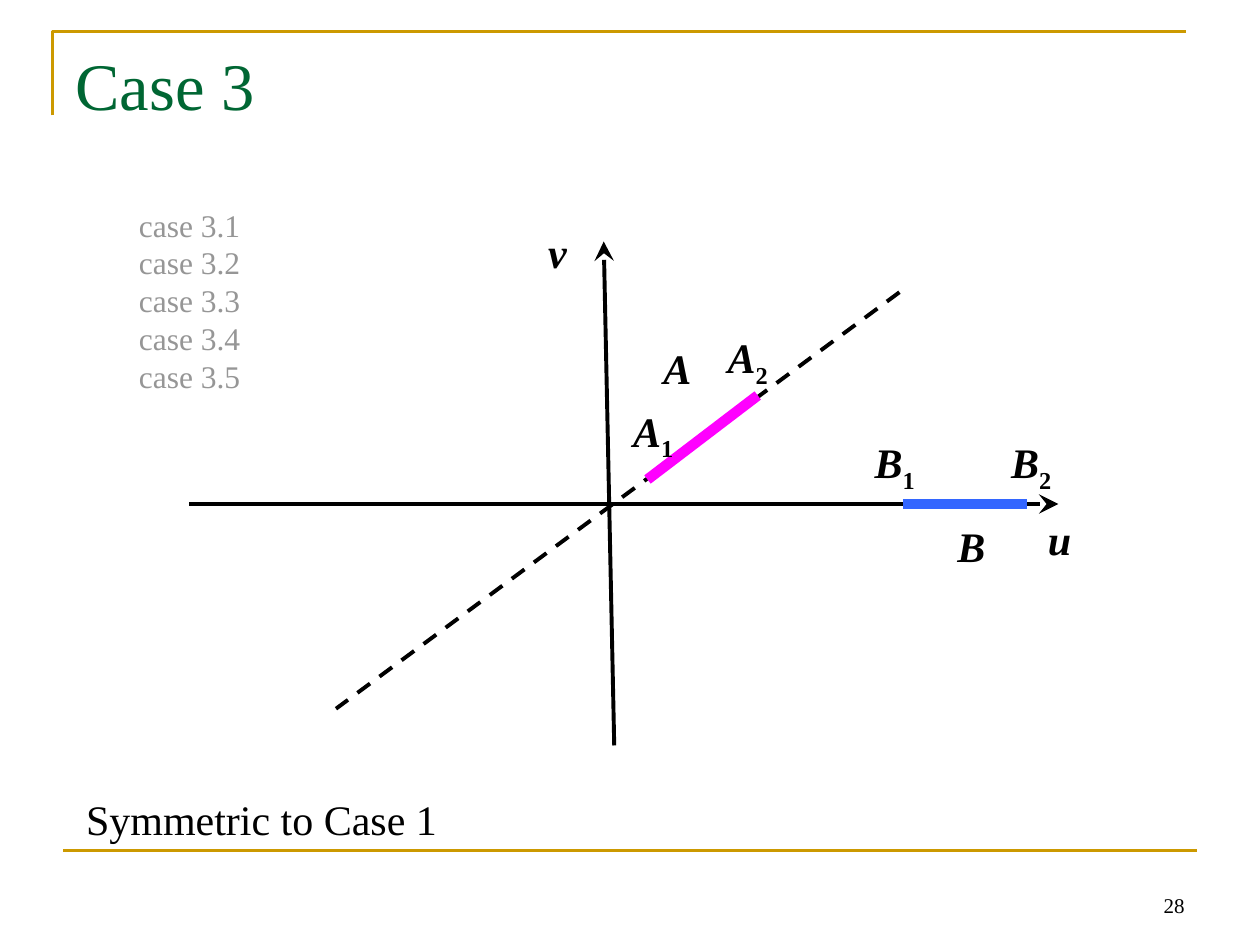
from dataclasses import dataclass

from lxml import etree
from pptx import Presentation
from pptx import util as u
from pptx.dml.color import RGBColor
from pptx.enum import dml, shapes, text
from pptx.oxml.ns import qn


@dataclass(frozen=True)
class Theme:
    font: str = "Times New Roman"
    ink: str = "000000"
    title: str = "006633"
    muted: str = "969696"
    frame: str = "CC9900"
    segment_a: str = "FF00FF"
    segment_b: str = "3366FF"
    title_size: float = 38
    body_size: float = 24
    list_size: float = 18
    number_size: float = 12
    frame_line: float = 1.5
    axis_line: float = 2.25
    segment_line: float = 6


THEME = Theme()
LABEL_HEIGHT = 36

TITLE = "Case 3"
CASES = [f"case 3.{number}" for number in range(1, 6)]
REMARK = "Symmetric to Case 1"
PAGE_NUMBER = "28"

CORNER = [(30, 66), (30, 18), (678, 18)]
FOOT_RULE = ((36, 486), (684, 486))
AXES = [((108, 288), (604.8, 288)), ((351, 426), (345, 138))]
SUPPORT_LINE = ((514, 167), (192, 405))

AXIS_LABELS = [("u", "", 591.5, 290, 28), ("v", "", 306, 126, 25)]
SEGMENTS = [
    {
        "line": ((370, 274), (433, 226)),
        "colour": THEME.segment_a,
        "labels": [("A", "", 372, 192, 30), ("A", "1", 354, 228, 38.5), ("A", "2", 408, 186, 38.5)],
    },
    {
        "line": ((516, 288), (587, 288)),
        "colour": THEME.segment_b,
        "labels": [("B", "1", 492, 246, 38.5), ("B", "2", 570, 246, 38.5), ("B", "", 540, 294, 30)],
    },
]


def add_span(para, words, size, colour=THEME.ink, bold=False, italic=False):
    span = para.add_run()
    span.text = words
    span.font.name = THEME.font
    span.font.size = u.Pt(size)
    span.font.bold = bold
    span.font.italic = italic
    span.font.color.rgb = RGBColor.from_string(colour)
    return span


def add_box(parent, left, top, width, height, align=text.PP_ALIGN.CENTER):
    box = parent.add_textbox(u.Pt(left), u.Pt(top), u.Pt(width), u.Pt(height))
    box.text_frame.word_wrap = False
    box.text_frame.auto_size = text.MSO_AUTO_SIZE.SHAPE_TO_FIT_TEXT
    box.text_frame.paragraphs[0].alignment = align
    return box


def add_label(parent, letter, index, left, top, width):
    para = add_box(parent, left, top, width, LABEL_HEIGHT).text_frame.paragraphs[0]
    add_span(para, letter, THEME.body_size, bold=True, italic=True)
    if index:
        span = add_span(para, index, THEME.body_size, bold=True)
        span._r.get_or_add_rPr().set("baseline", "-25000")


def add_line(parent, ends, colour, weight, arrow=False, dashed=False):
    start, end = ends
    line = parent.add_connector(
        shapes.MSO_CONNECTOR.STRAIGHT, *(u.Pt(value) for value in (*start, *end))
    )
    line.line.color.rgb = RGBColor.from_string(colour)
    line.line.width = u.Pt(weight)
    if dashed:
        line.line.dash_style = dml.MSO_LINE.DASH
    if arrow:
        outline = line.line._get_or_add_ln()
        etree.SubElement(outline, qn("a:tailEnd"), type="stealth", w="lg", len="lg")
    etree.SubElement(line._element.spPr, qn("a:effectLst"))


def add_frame(page):
    builder = page.shapes.build_freeform(*CORNER[0], scale=u.Pt(1))
    builder.add_line_segments(CORNER[1:], close=False)
    corner = builder.convert_to_shape()
    corner.shadow.inherit = False
    corner.fill.background()
    corner.line.color.rgb = RGBColor.from_string(THEME.frame)
    corner.line.width = u.Pt(THEME.frame_line)
    add_line(page.shapes, FOOT_RULE, THEME.frame, THEME.frame_line)
    box = add_box(page.shapes, 516, 492, 168, 36, text.PP_ALIGN.RIGHT)
    box.text_frame.word_wrap = True
    box.text_frame.auto_size = text.MSO_AUTO_SIZE.NONE
    box.text_frame.vertical_anchor = text.MSO_ANCHOR.BOTTOM
    add_span(box.text_frame.paragraphs[0], PAGE_NUMBER, THEME.number_size)


def add_title(page):
    title = page.shapes.title
    title.left, title.top, title.width, title.height = map(u.Pt, (36, 21.6, 648, 90))
    frame = title.text_frame
    frame.auto_size = text.MSO_AUTO_SIZE.NONE
    frame.vertical_anchor = text.MSO_ANCHOR.TOP
    frame.paragraphs[0].alignment = text.PP_ALIGN.LEFT
    add_span(frame.paragraphs[0], TITLE, THEME.title_size, THEME.title)


def add_diagram(page):
    for ends in AXES:
        add_line(page.shapes, ends, THEME.ink, THEME.axis_line, arrow=True)
    add_line(page.shapes, SUPPORT_LINE, THEME.ink, THEME.axis_line, dashed=True)
    for label in AXIS_LABELS:
        add_label(page.shapes, *label)
    for segment in SEGMENTS:
        group = page.shapes.add_group_shape().shapes
        add_line(group, segment["line"], segment["colour"], THEME.segment_line)
        for label in segment["labels"]:
            add_label(group, *label)


def add_cases(page):
    frame = add_box(page.shapes, 72, 114, 72.7, 115.2).text_frame
    for position, case in enumerate(CASES):
        para = frame.add_paragraph() if position else frame.paragraphs[0]
        para.alignment = text.PP_ALIGN.CENTER
        para.line_spacing = u.Pt(THEME.list_size * 1.2)
        add_span(para, case, THEME.list_size, THEME.muted)


def add_remark(page):
    box = add_box(page.shapes, 41, 450, 217, LABEL_HEIGHT)
    add_span(box.text_frame.paragraphs[0], REMARK, THEME.body_size)


def main():
    deck = Presentation()
    deck.slide_width, deck.slide_height = u.Pt(720), u.Pt(540)
    page = deck.slides.add_slide(deck.slide_layouts[5])
    add_frame(page)
    add_title(page)
    add_diagram(page)
    add_cases(page)
    add_remark(page)
    deck.save("out.pptx")


if __name__ == "__main__":
    main()
